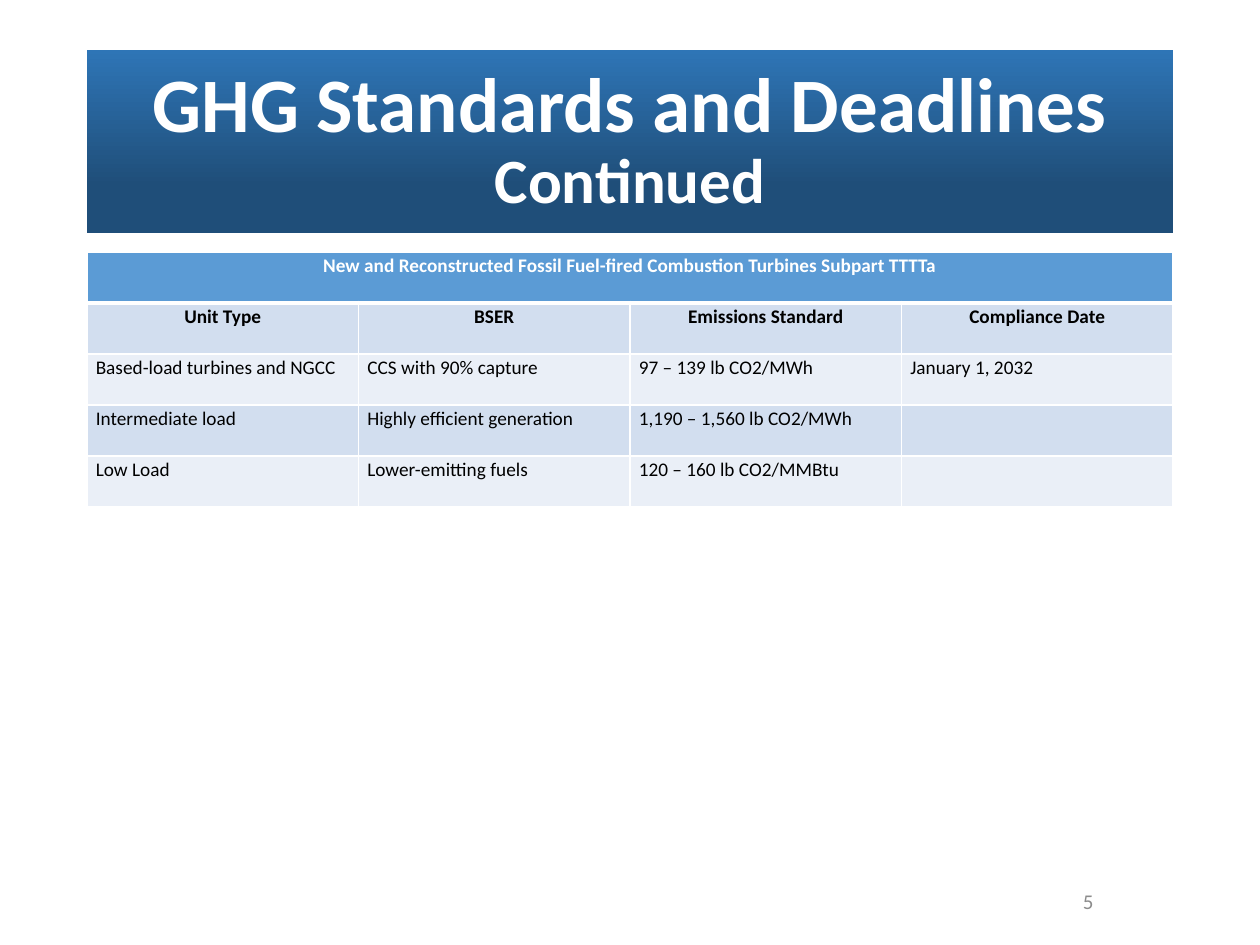
from lxml.etree import SubElement
from pptx import Presentation
from pptx.dml.color import RGBColor
from pptx.enum.text import MSO_ANCHOR as Anchor, MSO_AUTO_SIZE as AutoSize, PP_ALIGN as Align
from pptx.oxml.ns import qn
from pptx.util import Emu, Inches, Pt

# Content
TITLE = [("GHG Standards and Deadlines ", 44), ("Continued", 36)]
CAPTION = "New and Reconstructed Fossil Fuel-fired Combustion Turbines Subpart TTTTa"
HEADINGS = ["Unit Type", "BSER", "Emissions Standard", "Compliance Date"]
UNITS = [
    ["Based-load turbines and NGCC", "CCS with 90% capture", "97 – 139 lb CO2/MWh", "January 1, 2032"],
    ["Intermediate load", "Highly efficient generation", "1,190 – 1,560 lb CO2/MWh", ""],
    ["Low Load", "Lower-emitting fuels", "120 – 160 lb CO2/MMBtu", ""],
]
PAGE_NUMBER = "5"

# Look
FONT = "Calibri"
COLORS = {
    "white": "FFFFFF", "black": "000000", "number": "8C8C8C",
    "title_top": "2E75B6", "title_bottom": "1F4E79",
    "caption": "5B9BD5", "band_dark": "D2DEEF", "band_light": "EAEFF7",
}
LEFT, WIDTH = 87, 1086
TITLE_TOP, TITLE_HEIGHT = 50, 183
TABLE_TOP, ROW_HEIGHT = 252, 51
NUMBER_BOX = (822, 876, 284, 50)


def px(length):
    return Emu(round(length * 914400 / 126))


def color(name):
    return RGBColor.from_string(COLORS[name])


def style(span, size, color_name, bold=False):
    span.font.name = FONT
    span.font.size = Pt(size)
    span.font.bold = bold
    span.font.color.rgb = color(color_name)


def set_borders(cell, bottom):
    properties = cell._tc.get_or_add_tcPr()
    widths = {"a:lnL": 1, "a:lnR": 1, "a:lnT": 1, "a:lnB": bottom}
    for index, (tag, width) in enumerate(widths.items()):
        line = SubElement(properties, qn(tag), w=str(Pt(width)))
        fill = SubElement(line, qn("a:solidFill"))
        SubElement(fill, qn("a:srgbClr"), val=COLORS["white"])
        properties.insert(index, line)


def add_title(page):
    title = page.shapes.title
    title.left, title.top, title.width, title.height = map(
        px, (LEFT, TITLE_TOP, WIDTH, TITLE_HEIGHT))
    title.fill.gradient()
    title.fill.gradient_angle = 270
    stops = title.fill.gradient_stops
    for stop, position, name in zip(stops, (0, 0.74), ("title_top", "title_bottom")):
        stop.position = position
        stop.color.rgb = color(name)
    frame = title.text_frame
    frame.word_wrap = True
    frame.auto_size = AutoSize.NONE
    frame.vertical_anchor = Anchor.MIDDLE
    para = frame.paragraphs[0]
    para.alignment = Align.CENTER
    para.line_spacing = 0.9
    for text, size in TITLE:
        span = para.add_run()
        span.text = text
        style(span, size, "white", bold=True)


def add_standards_table(page):
    columns = len(HEADINGS)
    rows = [[CAPTION] + [""] * (columns - 1), HEADINGS, *UNITS]
    table = page.shapes.add_table(
        len(rows), columns, px(LEFT), px(TABLE_TOP), px(WIDTH), px(ROW_HEIGHT * len(rows))).table
    table.cell(0, 0).merge(table.cell(0, columns - 1))
    for r, texts in enumerate(rows):
        is_head = r < 2
        band = "caption" if r == 0 else "band_dark" if r % 2 else "band_light"
        for c, text in enumerate(texts):
            cell = table.cell(r, c)
            cell.fill.solid()
            cell.fill.fore_color.rgb = color(band)
            set_borders(cell, bottom=3 if r == 0 else 1)
            cell.margin_left = cell.margin_right = Inches(0.07)
            cell.margin_top = cell.margin_bottom = 0
            if text:
                para = cell.text_frame.paragraphs[0]
                para.text = text
                para.alignment = Align.CENTER if is_head else Align.LEFT
                para.line_spacing = 1.07
                style(para.runs[0], 11, "white" if r == 0 else "black", bold=is_head)


def add_page_number(page):
    frame = page.shapes.add_textbox(*map(px, NUMBER_BOX)).text_frame
    frame.word_wrap = True
    frame.vertical_anchor = Anchor.MIDDLE
    para = frame.paragraphs[0]
    para.text = PAGE_NUMBER
    para.alignment = Align.RIGHT
    style(para.runs[0], 12, "number")


def main():
    deck = Presentation()
    deck.slide_width, deck.slide_height = Inches(10), Inches(7.5)
    page = deck.slides.add_slide(deck.slide_layouts.get_by_name("Title Only"))
    add_title(page)
    add_standards_table(page)
    add_page_number(page)
    deck.save("out.pptx")


if __name__ == "__main__":
    main()
